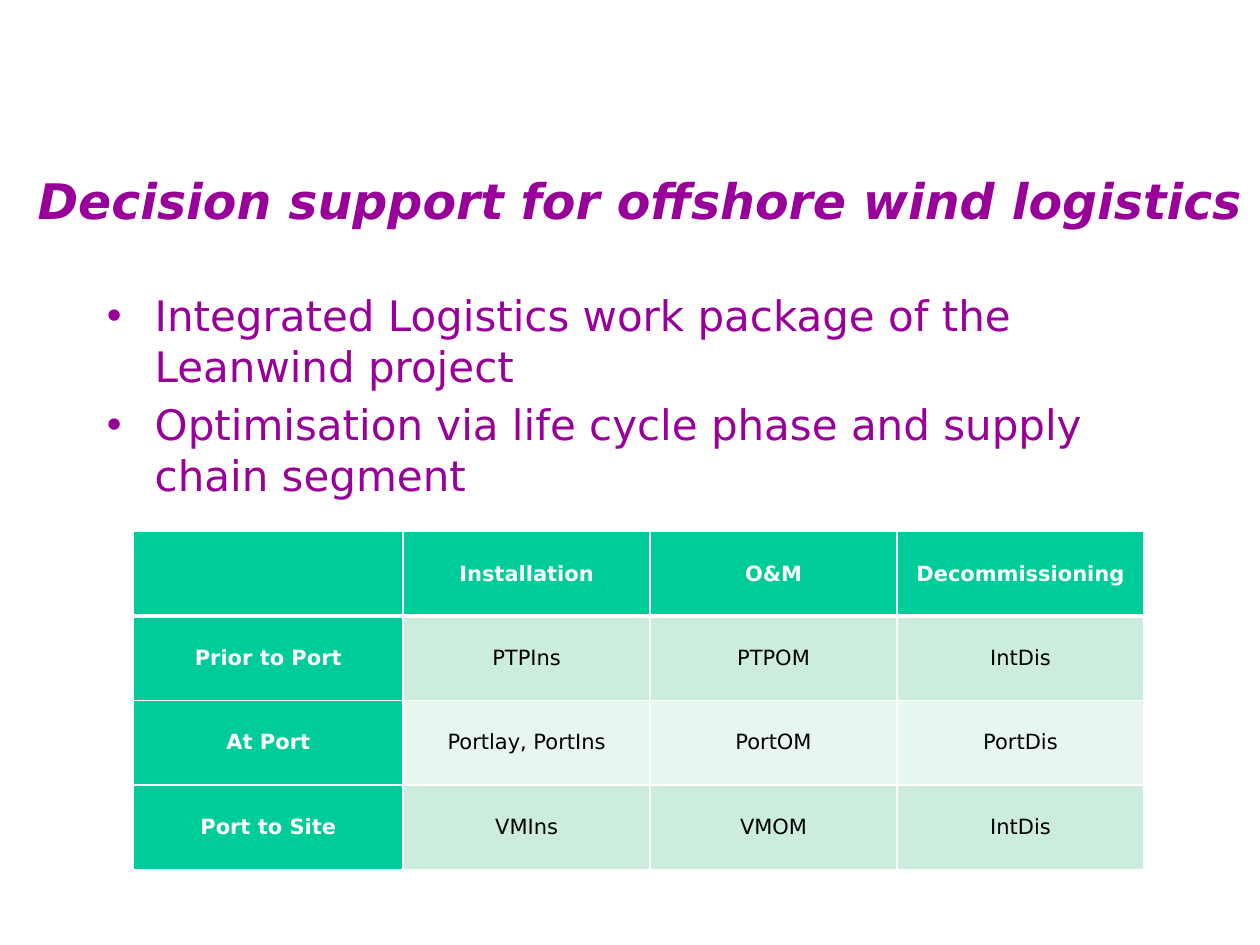
from lxml import etree
from pptx import Presentation, util as u
from pptx.dml.color import RGBColor
from pptx.enum import text as t
from pptx.oxml.ns import qn

TITLE = "Decision support for offshore wind logistics"
POINTS = [
    "Integrated Logistics work package of the Leanwind project",
    "Optimisation via life cycle phase and supply chain segment",
]
ROWS = [
    ["", "Installation", "O&M", "Decommissioning"],
    ["Prior to Port", "PTPIns", "PTPOM", "IntDis"],
    ["At Port", "Portlay, PortIns", "PortOM", "PortDis"],
    ["Port to Site", "VMIns", "VMOM", "IntDis"],
]

PURPLE = RGBColor(0x99, 0x00, 0x99)
GREEN = RGBColor(0x00, 0xCC, 0x99)
MINT = RGBColor(0xCC, 0xEC, 0xDE)
PALE = RGBColor(0xE7, 0xF6, 0xEF)
WHITE = RGBColor(0xFF, 0xFF, 0xFF)
BLACK = RGBColor(0x00, 0x00, 0x00)

FACE = "DejaVu Sans"
HEAD = {"name": FACE, "size": u.Pt(28), "bold": True, "italic": True}
BODY = {"name": FACE, "size": u.Pt(24)}
CELL = {"name": FACE, "size": u.Pt(12)}
INSET = {
    "margin_left": u.Inches(0.07), "margin_right": u.Inches(0.07),
    "margin_top": 0, "margin_bottom": 0,
    "vertical_anchor": t.MSO_ANCHOR.MIDDLE,
}
LEAD, COL, ROW = 2.14, 1.96, 0.67


def apply(item, form):
    for key, val in form.items():
        setattr(item, key, val)


def style(para, form, color):
    apply(para.font, form)
    para.font.color.rgb = color


def add_box(slide, area, anchor):
    frame = slide.shapes.add_textbox(*map(u.Inches, area)).text_frame
    apply(frame, {"word_wrap": True, "vertical_anchor": anchor})
    return frame


def add_bullet(para):
    props = para._p.get_or_add_pPr()
    props.set("marL", str(u.Inches(0.38)))
    props.set("indent", str(-u.Inches(0.38)))
    etree.SubElement(props, qn("a:buFont")).set("typeface", "Arial")
    etree.SubElement(props, qn("a:buChar")).set("char", "•")


def add_edges(cell, row):
    props = cell._tc.get_or_add_tcPr()
    thick = {0: "lnB", 1: "lnT"}.get(row)
    for side in ("lnL", "lnR", "lnT", "lnB"):
        line = etree.SubElement(props, qn("a:" + side))
        line.set("w", str(u.Pt(3 if side == thick else 1)))
        fill = etree.SubElement(line, qn("a:solidFill"))
        etree.SubElement(fill, qn("a:srgbClr")).set("val", str(WHITE))


def add_grid(slide):
    rows, cols = len(ROWS), len(ROWS[0])
    widths = [LEAD] + [COL] * (cols - 1)
    area = (1.06, 4.22, sum(widths), ROW * rows)
    grid = slide.shapes.add_table(rows, cols, *map(u.Inches, area)).table
    for col, width in zip(grid.columns, widths):
        col.width = u.Inches(width)
    for r, words in enumerate(ROWS):
        grid.rows[r].height = u.Inches(ROW)
        for c, word in enumerate(words):
            cell = grid.cell(r, c)
            label = r == 0 or c == 0
            add_edges(cell, r)
            apply(cell, INSET)
            cell.fill.solid()
            cell.fill.fore_color.rgb = GREEN if label else (PALE, MINT)[r % 2]
            para = cell.text_frame.paragraphs[0]
            para.text = word
            para.alignment = t.PP_ALIGN.CENTER
            style(para, {**CELL, "bold": label}, WHITE if label else BLACK)


def main():
    deck = Presentation()
    apply(deck, {"slide_width": u.Inches(10), "slide_height": u.Inches(7.5)})
    slide = deck.slides.add_slide(deck.slide_layouts[6])

    head = add_box(slide, (0.2, 1.25, 9.8, 0.67), t.MSO_ANCHOR.MIDDLE)
    head.text = TITLE
    style(head.paragraphs[0], HEAD, PURPLE)

    body = add_box(slide, (0.75, 2.25, 8.5, 1.81), t.MSO_ANCHOR.TOP)
    for i, point in enumerate(POINTS):
        para = body.add_paragraph() if i else body.paragraphs[0]
        para.text = point
        if i:
            para.space_before = u.Pt(4.8)
        add_bullet(para)
        style(para, BODY, PURPLE)

    add_grid(slide)
    deck.save("out.pptx")


if __name__ == "__main__":
    main()
